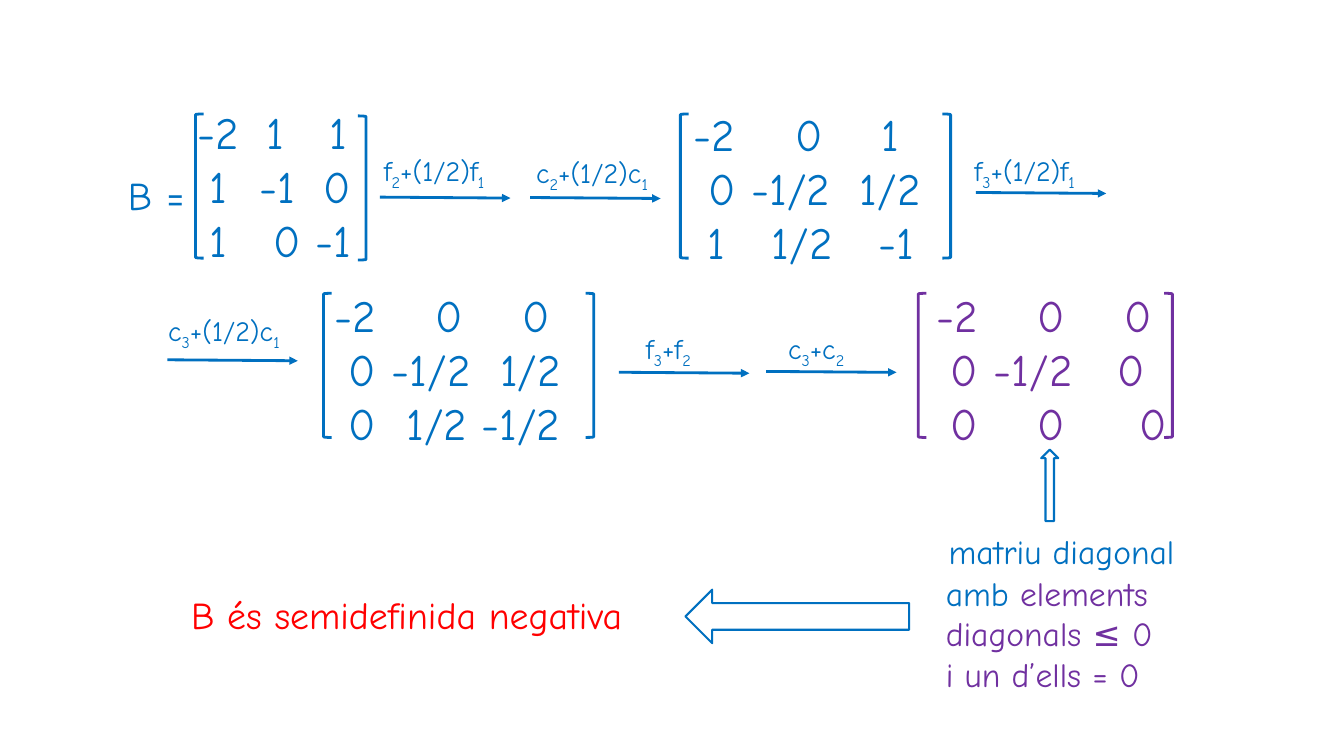
from lxml import etree
from pptx import Presentation
from pptx.dml.color import RGBColor
from pptx.enum.shapes import MSO_CONNECTOR, MSO_SHAPE
from pptx.oxml.ns import qn
from pptx.util import Pt

COLORS = {"blue": "0070C0", "purple": "7030A0", "red": "FF0000"}
HAND = "Comic Neue"

# Rows of (entry, centre of the entry on the slide); brackets: left, right
MATRICES = [
    {"brackets": (139.7, 255.6), "tops": (81.4, 82.8), "text_top": 71.3, "color": "blue",
     "rows": [[("-2", 156), ("1", 197), ("1", 242)],
              [("1", 156), ("-1", 198), ("0", 241)],
              [("1", 156), ("0", 205), ("-1", 238)]]},
    {"brackets": (486, 673.2), "tops": (81.4, 81.4), "text_top": 72.7, "color": "blue",
     "rows": [[("-2", 510), ("0", 578), ("1", 636)],
              [("0", 516), ("-1/2", 565), ("1/2", 636)],
              [("1", 512), ("1/2", 573), ("-1", 640)]]},
    {"brackets": (231.1, 418.3), "tops": (209.5, 209.5), "text_top": 202.3, "color": "blue",
     "rows": [[("-2", 254), ("0", 321), ("0", 383)],
              [("0", 259), ("-1/2", 308), ("1/2", 379)],
              [("0", 259), ("1/2", 312), ("-1/2", 372)]]},
    {"brackets": (655.9, 831.6), "tops": (209.5, 209.5), "text_top": 202.3, "color": "purple",
     "rows": [[("-2", 684), ("0", 751), ("0", 813)],
              [("0", 689), ("-1/2", 738), ("0", 808)],
              [("0", 689), ("0", 751), ("0", 824)]]},
]

# Label parts (base and subscript in turn), label left and top, arrow left and top
STEPS = [
    (("f", "2", "+(1/2)f", "1"), (267.1, 105.8), (271.4, 140.8)),
    (("c", "2", "+(1/2)c", "1"), (375.8, 107.3), (378.7, 141.1)),
    (("f", "3", "+(1/2)f", "1"), (689, 105.8), (697, 137.5)),
    (("c", "3", "+(1/2)c", "1"), (113, 220.3), (119.5, 257)),
    (("f", "3", "+f", "2"), (454.3, 233.3), (442.1, 265.9)),
    (("c", "3", "+c", "2"), (555.8, 233.3), (547.2, 265.3)),
]


def rgb(color):
    return RGBColor.from_string(COLORS[color])


def style(font, size, color, name=HAND):
    font.size, font.name = Pt(size), name
    font.color.rgb = rgb(color)


def add_text(slide, left, top, width, height):
    box = slide.shapes.add_textbox(Pt(left), Pt(top), Pt(width), Pt(height))
    return box.text_frame


def add_outline(slide, preset, left, top, width, height, color, weight, rotation=0):
    outline = slide.shapes.add_shape(preset, Pt(left), Pt(top), Pt(width), Pt(height))
    outline.shadow.inherit = False
    outline.fill.background()
    outline.line.color.rgb = rgb(color)
    outline.line.width = Pt(weight)
    outline.rotation = rotation


def set_centre_tabs(paragraph, positions):
    tabs = etree.Element(qn("a:tabLst"))
    for position in positions:
        etree.SubElement(tabs, qn("a:tab"), pos=str(Pt(position)), algn="ctr")
    # The tab list precedes the default run properties
    paragraph._p.get_or_add_pPr().insert(0, tabs)


def add_matrix(slide, brackets, tops, text_top, color, rows):
    presets = (MSO_SHAPE.LEFT_BRACKET, MSO_SHAPE.RIGHT_BRACKET)
    for preset, left, top in zip(presets, brackets, tops):
        add_outline(slide, preset, left, top, 5.8, 103, color, 2)
    start = brackets[0]
    frame = add_text(slide, start, text_top, 196, 124)
    frame.margin_left = frame.margin_right = 0
    frame.word_wrap = True
    for index, row in enumerate(rows):
        line = frame.paragraphs[0] if index == 0 else frame.add_paragraph()
        line.text = "".join("\t" + entry for entry, _ in row)
        style(line.font, 32, color)
        set_centre_tabs(line, [centre - start for _, centre in row])


def add_step(slide, parts, label_at, arrow_at):
    """Draw a row or column operation: its label above an arrow."""
    frame = add_text(slide, *label_at, 109.4, 31.7)
    frame.word_wrap = True
    label = frame.paragraphs[0]
    style(label.font, 20, "blue")
    for index, part in enumerate(parts):
        run = label.add_run()
        run.text = part
        if index % 2:
            run.font._element.set("baseline", "-25000")

    left, top = arrow_at
    arrow = slide.shapes.add_connector(
        MSO_CONNECTOR.STRAIGHT, Pt(left), Pt(top), Pt(left + 93.2), Pt(top + 0.7))
    arrow.line.color.rgb = rgb("blue")
    arrow.line.width = Pt(2)
    etree.SubElement(arrow.line._get_or_add_ln(), qn("a:tailEnd"), type="triangle")
    etree.SubElement(arrow._element.spPr, qn("a:effectLst"))


def add_matrix_name(slide):
    frame = add_text(slide, 84.2, 118.8, 60, 41)
    frame.word_wrap = False
    for text, font in (("B ", HAND), ("=", "Karla")):
        run = frame.paragraphs[0].add_run()
        run.text = text
        style(run.font, 28, "blue", font)


def add_diagonal_note(slide):
    frame = add_text(slide, 668.5, 376, 200, 124)
    frame.word_wrap = False
    lines = [[("matriu diagonal", "blue")],
             [("amb ", "blue"), ("elements", "purple")],
             [("diagonals ≤ 0", "purple")],
             [("i un d’ells = 0", "purple")]]
    for index, parts in enumerate(lines):
        line = frame.paragraphs[0] if index == 0 else frame.add_paragraph()
        if index == 0:
            line._p.get_or_add_pPr().set("indent", str(Pt(2)))
        if index == 1:
            line.space_before = Pt(1)
        for text, color in parts:
            run = line.add_run()
            run.text = text
            style(run.font, 24, color)


def add_conclusion(slide):
    frame = add_text(slide, 129.5, 419.3, 340, 40)
    frame.word_wrap = False
    conclusion = frame.paragraphs[0]
    conclusion.text = "B és semidefinida negativa"
    style(conclusion.font, 27, "red")


def main():
    deck = Presentation()
    deck.slide_width, deck.slide_height = Pt(960), Pt(540)
    slide = deck.slides.add_slide(deck.slide_layouts[6])
    add_matrix_name(slide)
    for matrix in MATRICES:
        add_matrix(slide, **matrix)
    for step in STEPS:
        add_step(slide, *step)
    add_diagonal_note(slide)
    add_conclusion(slide)
    add_outline(slide, MSO_SHAPE.RIGHT_ARROW, 489.6, 421.2, 159.8, 38.2, "blue", 1.5, 180)
    add_outline(slide, MSO_SHAPE.RIGHT_ARROW, 724.3, 340.6, 51.1, 12.2, "blue", 1.5, 270)
    deck.save("out.pptx")


if __name__ == "__main__":
    main()
